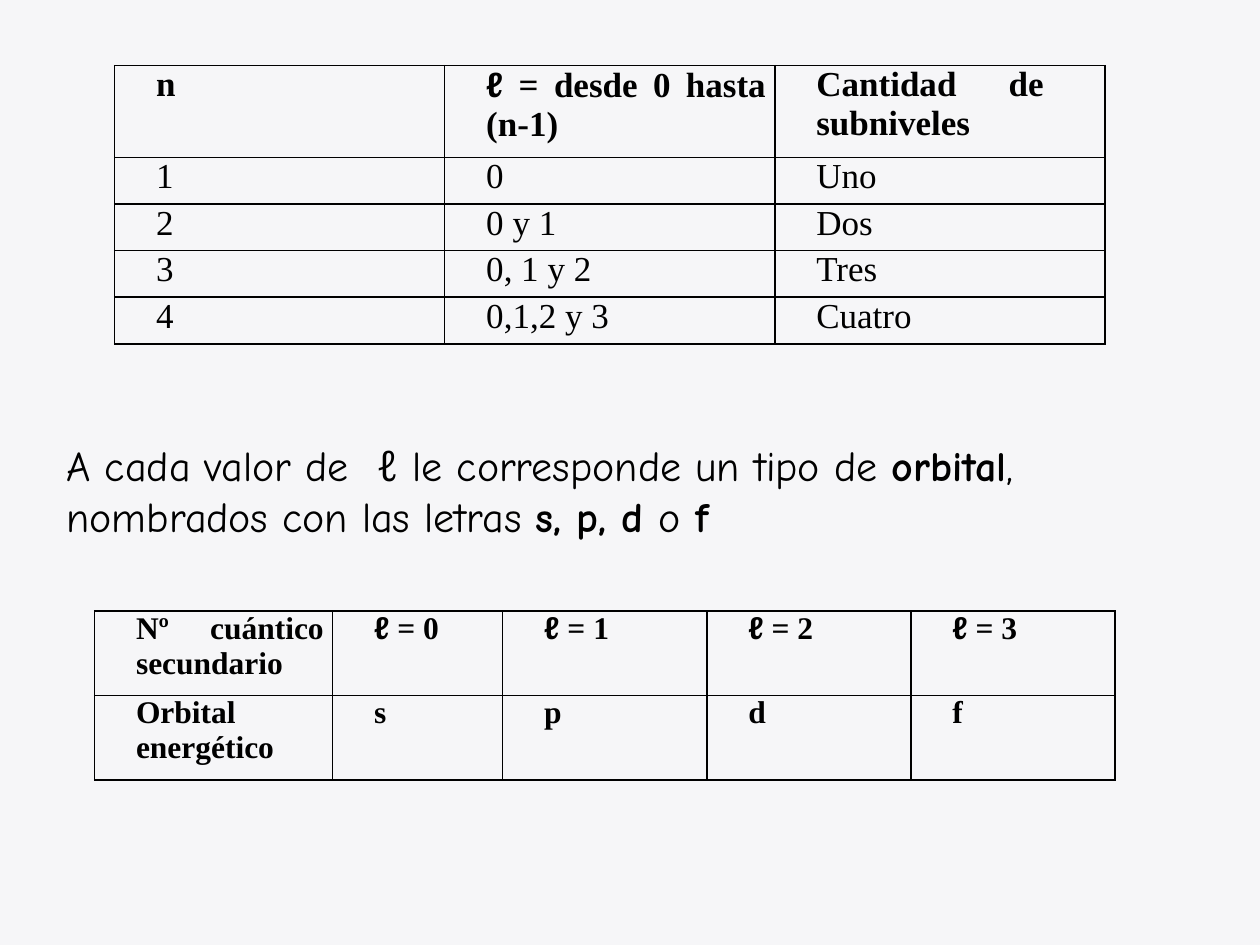
from dataclasses import dataclass

from lxml.etree import SubElement
from pptx import Presentation
from pptx.dml.color import RGBColor
from pptx.enum.text import MSO_AUTO_SIZE, PP_ALIGN
from pptx.oxml.ns import qn
from pptx.util import Inches, Pt

COLORS = {"background": "F6F6F8", "ink": "000000"}
TABLE_FONT, SYMBOL_FONT, BODY_FONT = "Times New Roman", "Arial", "Comic Neue"
SYMBOL = "ℓ"
CELL_FORMAT = {
    "margin_left": Inches(0.07),
    "margin_right": Inches(0.07),
    "margin_top": 0,
    "margin_bottom": 0,
}


@dataclass
class GridTable:
    left: float
    top: float
    columns: list[float]
    rows: list[float]
    size: int
    bold_rows: int
    content: list[list[str]]


LEVELS = GridTable(
    0.91, 0.52, [2.62] * 3, [0.73] + [0.37] * 4, 20, 1,
    [
        ["n", "ℓ = desde 0 hasta (n-1)", "Cantidad de  subniveles"],
        ["1", "0", "Uno"],
        ["2", "0 y 1", "Dos"],
        ["3", "0, 1 y 2", "Tres"],
        ["4", "0,1,2 y 3", "Cuatro"],
    ],
)
ORBITALS = GridTable(
    0.75, 4.85, [1.89, 1.35] + [1.62] * 3, [0.67] * 2, 18, 2,
    [
        ["Nº cuántico secundario"] + [f"ℓ = {number}" for number in range(4)],
        ["Orbital energético", "s", "p", "d", "f"],
    ],
)
# Plain and bold pieces alternate
STATEMENT = [
    "A cada valor de  ℓ le corresponde un tipo de ",
    "orbital",
    ", nombrados con las letras ",
    "s, p, d ",
    "o",
    " f",
]


def add_run(paragraph, text: str, font: str, size: int, bold: bool) -> None:
    run = paragraph.add_run()
    run.text = text
    for name, value in {"name": font, "size": Pt(size), "bold": bold}.items():
        setattr(run.font, name, value)
    run.font.color.rgb = RGBColor.from_string(COLORS["ink"])


def add_borders(cell) -> None:
    properties = cell._tc.get_or_add_tcPr()
    for position, side in enumerate(("lnL", "lnR", "lnT", "lnB")):
        line = properties.makeelement(qn(f"a:{side}"), {"w": str(Pt(1))})
        fill = SubElement(line, qn("a:solidFill"))
        SubElement(fill, qn("a:srgbClr"), {"val": COLORS["ink"]})
        properties.insert(position, line)


def fill_cell(cell, text: str, size: int, bold: bool) -> None:
    for name, value in CELL_FORMAT.items():
        setattr(cell, name, value)
    cell.fill.background()
    add_borders(cell)
    paragraph = cell.text_frame.paragraphs[0]
    paragraph.alignment = PP_ALIGN.JUSTIFY
    paragraph._p.get_or_add_pPr().set("marL", str(Inches(0.26)))
    if text.startswith(SYMBOL):
        add_run(paragraph, SYMBOL, SYMBOL_FONT, size, bold)
        text = text.removeprefix(SYMBOL)
    add_run(paragraph, text, TABLE_FONT, size, bold)


def add_grid_table(slide, grid: GridTable) -> None:
    table = slide.shapes.add_table(
        len(grid.rows), len(grid.columns), Inches(grid.left), Inches(grid.top),
        Inches(sum(grid.columns)), Inches(sum(grid.rows)),
    ).table
    table.first_row = table.horz_banding = False
    for column, width in zip(table.columns, grid.columns):
        column.width = Inches(width)
    for index, (row, height) in enumerate(zip(table.rows, grid.rows)):
        row.height = Inches(height)
        for cell, text in zip(row.cells, grid.content[index]):
            fill_cell(cell, text, grid.size, index < grid.bold_rows)


def add_statement(slide, pieces: list[str]) -> None:
    shape = slide.shapes.add_textbox(
        Inches(0.43), Inches(3.44), Inches(8.74), Inches(1.21)
    )
    frame = shape.text_frame
    frame.word_wrap = True
    frame.auto_size = MSO_AUTO_SIZE.SHAPE_TO_FIT_TEXT
    for index, text in enumerate(pieces):
        add_run(frame.paragraphs[0], text, BODY_FONT, 24, index % 2 == 1)


def main() -> None:
    presentation = Presentation()
    presentation.slide_width = Inches(10)
    presentation.slide_height = Inches(7.5)
    slide = presentation.slides.add_slide(presentation.slide_layouts[6])
    background = slide.background.fill
    background.solid()
    background.fore_color.rgb = RGBColor.from_string(COLORS["background"])

    # Sublevels, statement, then orbital letters
    add_grid_table(slide, LEVELS)
    add_statement(slide, STATEMENT)
    add_grid_table(slide, ORBITALS)
    presentation.save("out.pptx")


if __name__ == "__main__":
    main()
